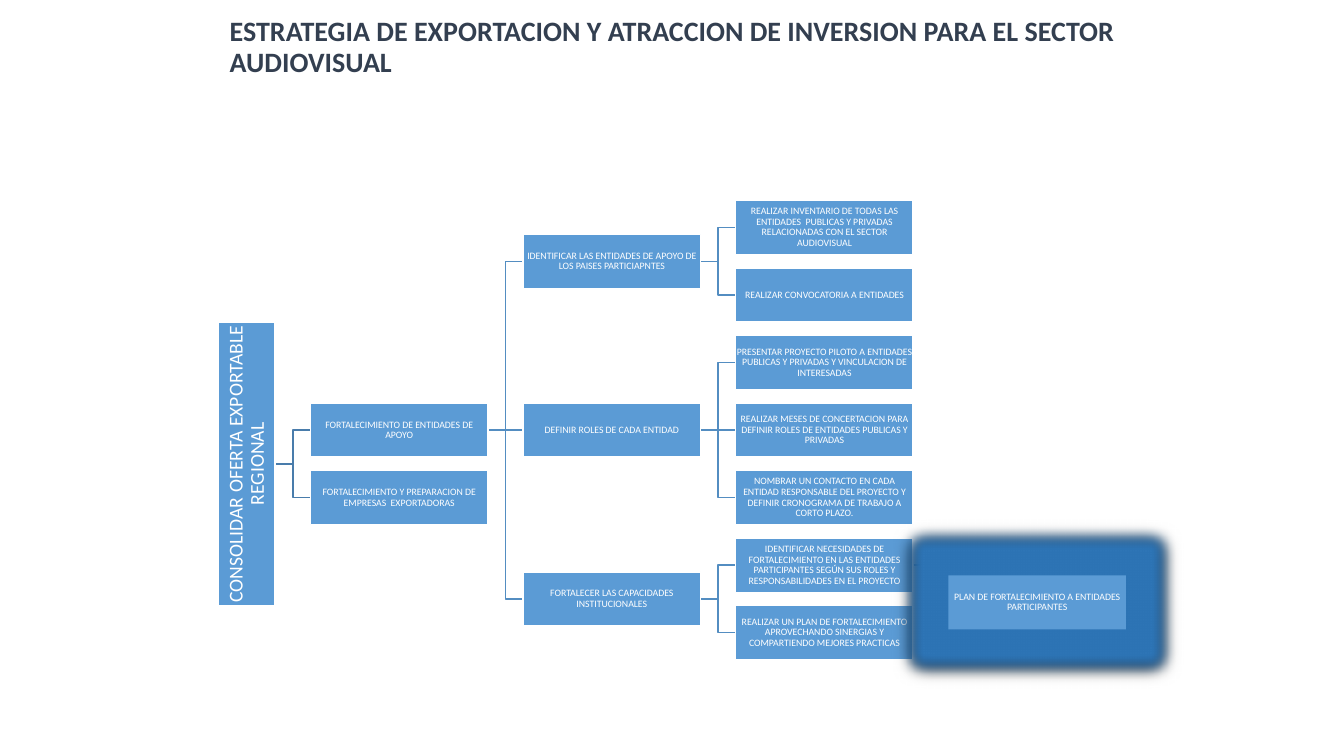
from lxml import etree
from pptx import Presentation
from pptx.dml.color import RGBColor
from pptx.enum.shapes import MSO_CONNECTOR as Wire, MSO_SHAPE as Form
from pptx.enum.text import MSO_ANCHOR as Anchor, PP_ALIGN as Align
from pptx.oxml import parse_xml
from pptx.oxml.ns import nsdecls, qn
from pptx.util import Pt

NAVY = RGBColor(0x33, 0x3F, 0x50)
BLUE = RGBColor(0x5B, 0x9B, 0xD5)
LINK = RGBColor(0x53, 0x8D, 0xC1)
STEM = RGBColor(0x49, 0x7C, 0xAB)
WHITE = RGBColor(0xFF, 0xFF, 0xFF)
FONT = "Calibri"

ROOT = "CONSOLIDAR OFERTA EXPORTABLE REGIONAL"
NODES = {
    "apoyo": (0, 3, "FORTALECIMIENTO DE ENTIDADES DE APOYO"),
    "empresas": (0, 4, "FORTALECIMIENTO Y PREPARACION DE EMPRESAS  EXPORTADORAS"),
    "paises": (1, 0.5, "IDENTIFICAR LAS ENTIDADES DE APOYO DE LOS PAISES PARTICIAPNTES"),
    "roles": (1, 3, "DEFINIR ROLES DE CADA ENTIDAD"),
    "fuerza": (1, 5.5, "FORTALECER LAS CAPACIDADES INSTITUCIONALES"),
    "lista": (2, 0, "REALIZAR INVENTARIO DE TODAS LAS ENTIDADES  PUBLICAS Y PRIVADAS "
                    "RELACIONADAS CON EL SECTOR AUDIOVISUAL"),
    "llamado": (2, 1, "REALIZAR CONVOCATORIA A ENTIDADES"),
    "piloto": (2, 2, "PRESENTAR PROYECTO PILOTO A ENTIDADES PUBLICAS Y PRIVADAS "
                     "Y VINCULACION DE INTERESADAS"),
    "meses": (2, 3, "REALIZAR MESES DE CONCERTACION PARA DEFINIR ROLES DE ENTIDADES "
                    "PUBLICAS Y PRIVADAS"),
    "contacto": (2, 4, "NOMBRAR UN CONTACTO EN CADA ENTIDAD RESPONSABLE DEL PROYECTO "
                       "Y DEFINIR CRONOGRAMA DE TRABAJO A CORTO PLAZO."),
    "falta": (2, 5, "IDENTIFICAR NECESIDADES DE FORTALECIMIENTO EN LAS ENTIDADES "
                    "PARTICIPANTES SEGÚN SUS ROLES Y RESPONSABILIDADES EN EL PROYECTO"),
    "mejora": (2, 6, "REALIZAR UN PLAN DE FORTALECIMIENTO APROVECHANDO SINERGIAS "
                     "Y COMPARTIENDO MEJORES PRACTICAS"),
    "plan": (3, 5.55, "PLAN DE FORTALECIMIENTO A ENTIDADES PARTICIPANTES"),
}
LINKS = {
    "apoyo": ["paises", "roles", "fuerza"],
    "paises": ["lista", "llamado"],
    "roles": ["piloto", "meses", "contacto"],
    "fuerza": ["falta", "mejora"],
    "falta": ["plan"],
}


def write(shape, text, size, color, inset=None):
    frame = shape.text_frame
    frame.word_wrap = True
    frame.vertical_anchor = Anchor.MIDDLE
    if inset is not None:
        frame.margin_left = frame.margin_right = Pt(inset)
        frame.margin_top = frame.margin_bottom = Pt(inset)
    para = frame.paragraphs[0]
    para.text = text
    para.line_spacing = 0.9
    para.font.name, para.font.size = FONT, Pt(size)
    para.font.color.rgb = color
    return para


def add_title(slide, left, top, width, height):
    box = slide.shapes.add_textbox(Pt(left), Pt(top), Pt(width), Pt(height))
    para = write(box, "ESTRATEGIA DE EXPORTACION Y ATRACCION DE INVERSION "
                      "PARA EL SECTOR AUDIOVISUAL", 20, NAVY)
    para.font.bold = True


def add_node(slide, text, left, top, width, height, size=7, inset=0):
    node = slide.shapes.add_shape(Form.RECTANGLE, Pt(left), Pt(top), Pt(width), Pt(height))
    node.shadow.inherit = False
    node.fill.solid()
    node.fill.fore_color.rgb = BLUE
    node.line.color.rgb = WHITE
    node.line.width = Pt(1)
    write(node, text, size, WHITE, inset).alignment = Align.CENTER
    return node


def add_glow(node):
    node.line.fill.background()
    props = node.element.spPr
    props.replace(props.find(qn("a:effectLst")), parse_xml(
        f'<a:effectLst {nsdecls("a")}>'
        f'<a:glow rad="{Pt(18)}"><a:srgbClr val="2E75B6"/></a:glow>'
        f'<a:outerShdw blurRad="{Pt(8.5)}" dist="{Pt(1)}" dir="5400000">'
        '<a:srgbClr val="000000"/></a:outerShdw></a:effectLst>'))


def add_link(slide, start, end, node, color):
    x, y = start
    goal, level = end
    kind = Wire.STRAIGHT if abs(y - level) < 1 else Wire.ELBOW
    wire = slide.shapes.add_connector(kind, Pt(x), Pt(y), Pt(goal), Pt(level))
    wire.line.color.rgb = color
    wire.line.width = Pt(1)
    etree.SubElement(wire.element.spPr, qn("a:effectLst"))
    wire.end_connect(node, 1)
    slide.shapes.element.insert(2, wire.element)
    return wire


def add_tree(slide, left, top, width, height):
    wide, tall, gap = 126.7, 38.6, 25.2
    step = (height - tall) / 6
    trunk = width - 4 * (wide + gap)
    span = 203
    mid = top + tall / 2 + 3.5 * step

    def spot(name, side):
        col, row, _ = NODES[name]
        x = left + trunk + gap + col * (wide + gap) + side * wide
        return x, top + tall / 2 + row * step

    root = add_node(slide, ROOT, left + (trunk - span) / 2, mid - trunk / 2,
                    span, trunk, 14, 0.7)
    root.rotation = 270
    nodes = {}
    for name, (_, _, text) in NODES.items():
        x, y = spot(name, 0)
        nodes[name] = add_node(slide, text, x, y - tall / 2, wide, tall)
    add_glow(nodes["plan"])

    for name in ("apoyo", "empresas"):
        add_link(slide, (left + trunk, mid), spot(name, 0), nodes[name], STEM)
    for name, kids in LINKS.items():
        for kid in kids:
            wire = add_link(slide, spot(name, 1), spot(kid, 0), nodes[kid], LINK)
            wire.begin_connect(nodes[name], 3)


def main():
    deck = Presentation()
    deck.slide_width, deck.slide_height = Pt(960), Pt(540)
    slide = deck.slides.add_slide(deck.slide_layouts[6])
    add_title(slide, 157, 9.4, 648, 49.7)
    add_tree(slide, 156.2, 143.2, 648, 328.1)
    deck.save("out.pptx")


if __name__ == "__main__":
    main()
